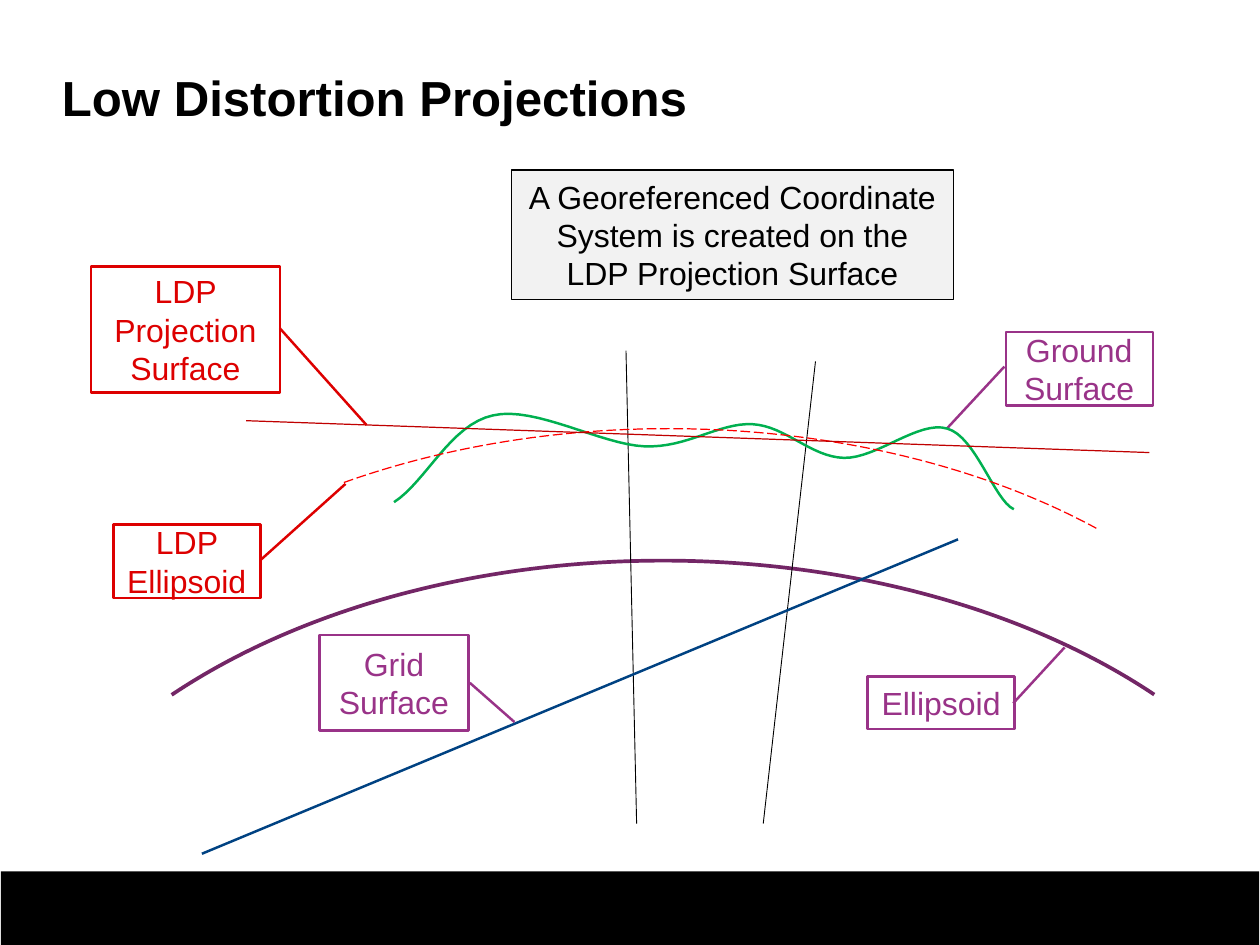
import pptx
import pptx.util
import pptx.dml.color
import pptx.enum.dml
import pptx.enum.shapes
import pptx.enum.text
import pptx.oxml

Inches = pptx.util.Inches
SHAPE = pptx.enum.shapes.MSO_SHAPE
ALIGN = pptx.enum.text.PP_ALIGN
PURPLE, RED, BLACK = "993388", "DD0000", "000000"


def rgb(value):
    return pptx.dml.color.RGBColor.from_string(value)


def bezier(p0, p1, p2, p3, steps=16):
    for i in range(1, steps + 1):
        t = i / steps
        u = 1 - t
        yield tuple(u**3 * a + 3 * u * u * t * b + 3 * u * t * t * c + t**3 * d
                    for a, b, c, d in zip(p0, p1, p2, p3))


class Deck:
    font = "Arial"

    def __init__(self, width, height):
        self.prs = pptx.Presentation()
        self.prs.slide_width = Inches(width)
        self.prs.slide_height = Inches(height)
        self.s = self.prs.slides.add_slide(self.prs.slide_layouts[6])

    def stroke(self, line, color, width):
        line.color.rgb = rgb(color)
        line.width = pptx.util.Pt(width)

    def label(self, sp, text, size, color, bold=False, align=ALIGN.CENTER, margins=(0.14, 0.07)):
        tf = sp.text_frame
        tf.word_wrap = True
        tf.vertical_anchor = pptx.enum.text.MSO_ANCHOR.MIDDLE
        tf.margin_left = tf.margin_right = Inches(margins[0])
        tf.margin_top = tf.margin_bottom = Inches(margins[1])
        tf.text = text
        p = tf.paragraphs[0]
        p.alignment = align
        font = p.runs[0].font
        font.name, font.size, font.bold = self.font, pptx.util.Pt(size), bold
        font.color.rgb = rgb(color)

    def title(self, text, box):
        sp = self.s.shapes.add_textbox(*map(Inches, box))
        self.label(sp, text, 40, BLACK, True, ALIGN.LEFT, (0, 0))

    def shape(self, kind, box, fill=None, line=None, width=1, adj=()):
        sp = self.s.shapes.add_shape(kind, *map(Inches, box))
        sp.shadow.inherit = False
        for i, value in enumerate(adj):
            sp.adjustments[i] = value
        if fill:
            sp.fill.solid()
            sp.fill.fore_color.rgb = rgb(fill)
        else:
            sp.fill.background()
        if line:
            self.stroke(sp.line, line, width)
        else:
            sp.line.fill.background()
        return sp

    def callout(self, text, box, color, adj):
        sp = self.shape(SHAPE.LINE_CALLOUT_1, box, line=color, width=2, adj=adj)
        self.label(sp, text, 26, color)

    def line(self, start, end, color, width):
        sp = self.s.shapes.add_connector(pptx.enum.shapes.MSO_CONNECTOR.STRAIGHT,
                                         *map(Inches, start + end))
        self.stroke(sp.line, color, width)
        sp._element.spPr.append(pptx.oxml.parse_xml(
            '<a:effectLst xmlns:a="http://schemas.openxmlformats.org/drawingml/2006/main"/>'))

    def curve(self, start, segments, color, width):
        points = [start]
        for segment in segments:
            points.extend(bezier(points[-1], *segment))
        points = [(Inches(x), Inches(y)) for x, y in points]
        fb = self.s.shapes.build_freeform(*points[0])
        fb.add_line_segments(points[1:], close=False)
        sp = fb.convert_to_shape()
        sp.shadow.inherit = False
        sp.fill.background()
        self.stroke(sp.line, color, width)


def main():
    deck = Deck(14.23, 10.67)
    deck.shape(SHAPE.RECTANGLE, (0.01, 9.84, 14.21, 0.83), fill=BLACK)
    deck.title("Low Distortion Projections", (0.7, 0.59, 12.86, 1))

    deck.shape(SHAPE.ARC, (-0.16, 6.33, 15.3, 9.72), line="732666", width=3, adj=(126.64, 197.33))
    deck.callout("Ellipsoid", (9.8, 7.64, 1.66, 0.59), PURPLE, (0.51, 0.99, -0.56, 1.34))
    deck.callout("Ground Surface", (11.36, 3.75, 1.66, 0.83), PURPLE, (0.47, -0.01, 1.31, -0.4))

    deck.line((7.19, 9.3), (7.07, 3.96), BLACK, 0.75)
    deck.line((8.62, 9.3), (9.21, 4.08), BLACK, 0.75)
    deck.line((2.28, 9.64), (10.82, 6.09), "004282", 2)

    ground = [
        ((4.81, 5.44), (5.09, 4.79), (5.57, 4.69)),
        ((6.04, 4.58), (6.79, 5.02), (7.28, 5.04)),
        ((7.76, 5.06), (8.12, 4.77), (8.5, 4.79)),
        ((8.87, 4.81), (9.16, 5.16), (9.53, 5.17)),
        ((9.9, 5.18), (10.38, 4.74), (10.7, 4.84)),
        ((11.02, 4.93), (11.23, 5.65), (11.45, 5.75)),
    ]
    deck.curve((4.45, 5.67), ground, "00B050", 2)
    deck.callout("Grid Surface", (3.61, 7.17, 1.68, 1.08), PURPLE, (0.5, 1.01, 0.91, 1.31))

    ldp_arc = deck.shape(SHAPE.ARC, (0.2, 4.84, 14.7, 9.13), line="FF0000", adj=(136.31, 194.73))
    ldp_arc.line.dash_style = pptx.enum.dml.MSO_LINE.LONG_DASH
    deck.line((2.78, 4.75), (12.98, 5.11), "C00000", 1)
    deck.callout("LDP Projection Surface", (1.03, 3.01, 2.13, 1.42), RED, (0.49, 1, 1.26, 1.46))
    deck.callout("LDP Ellipsoid", (1.28, 5.92, 1.66, 0.83), RED, (0.49, 1, -0.55, 1.58))

    note = deck.shape(SHAPE.RECTANGLE, (5.78, 1.92, 4.99, 1.46), fill="F2F2F2", line=BLACK)
    deck.label(note, "A Georeferenced Coordinate System is created on the LDP Projection Surface",
               26, BLACK)
    deck.prs.save("out.pptx")


if __name__ == "__main__":
    main()
